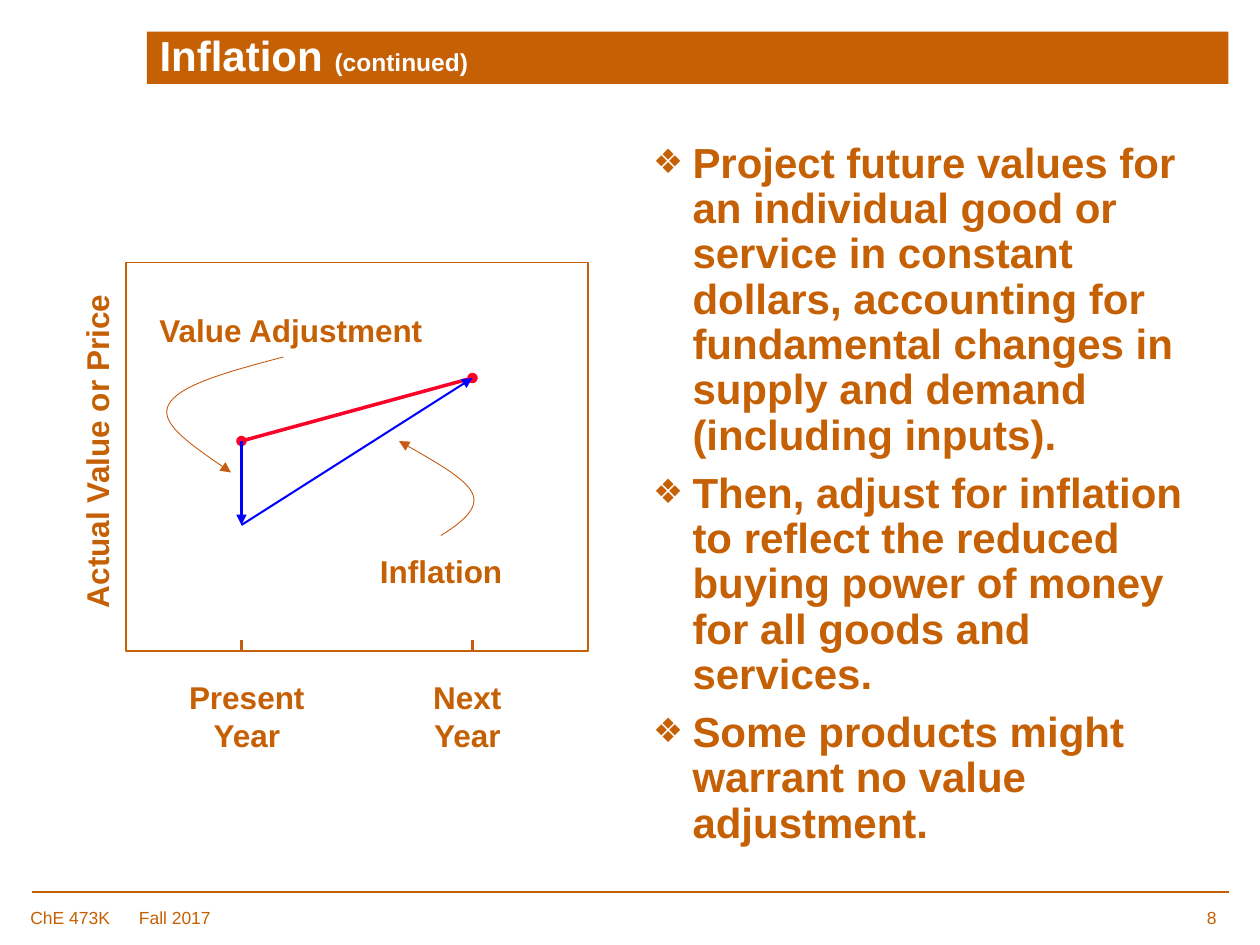
from lxml import etree
from pptx import Presentation
from pptx.dml.color import RGBColor
from pptx.enum.shapes import MSO_CONNECTOR, MSO_SHAPE
from pptx.enum.text import MSO_ANCHOR, MSO_AUTO_SIZE, PP_ALIGN
from pptx.oxml.ns import qn
from pptx.util import Pt

ORANGE = RGBColor(0xC6, 0x60, 0x05)
RUST = RGBColor(0xC7, 0x5B, 0x12)
RED = RGBColor(0xFC, 0x01, 0x28)
BLUE = RGBColor(0x00, 0x00, 0xFF)
WHITE = RGBColor(0xFF, 0xFF, 0xFF)
RECT = MSO_SHAPE.RECTANGLE
STRAIGHT = MSO_CONNECTOR.STRAIGHT
LEFT, CENTER = PP_ALIGN.LEFT, PP_ALIGN.CENTER
TOP, MIDDLE = MSO_ANCHOR.TOP, MSO_ANCHOR.MIDDLE
NO_FIT = MSO_AUTO_SIZE.NONE
THIN = 1.15

# Chart positions in points
NOW, NEXT = 138, 270
BASE = 372
START, LOW, END = 252, 300, 216

POINTS = [
    "Project future values for an individual good or service in constant dollars, "
    "accounting for fundamental changes in supply and demand (including inputs).",
    "Then, adjust for inflation to reflect the reduced buying power of money "
    "for all goods and services.",
    "Some products might warrant no value adjustment.",
]


def place(shape, left, top, width, height):
    shape.left, shape.top = Pt(left), Pt(top)
    shape.width, shape.height = Pt(width), Pt(height)


def set_font(para, size, color=ORANGE, bold=True):
    font = para.font
    font.name, font.bold = "Arial", bold
    font.color.rgb = color
    if size:
        font.size = Pt(size)


def add_xml(parent, tag, **attrs):
    return etree.SubElement(parent, qn(tag), attrs)


def style_line(shape, color, width, head=None, tail=None):
    shape.line.color.rgb = color
    shape.line.width = Pt(width)
    props = shape._element.spPr
    ln = props.find(qn("a:ln"))
    for tag, kind in (("a:headEnd", head), ("a:tailEnd", tail)):
        if kind:
            add_xml(ln, tag, type=kind)
    if props.find(qn("a:effectLst")) is None:
        add_xml(props, "a:effectLst")


def add_line(slide, start, end, color, width, head=None, tail=None):
    line = slide.shapes.add_connector(STRAIGHT, *map(Pt, start + end))
    style_line(line, color, width, head, tail)


def add_curve(slide, start, *parts):
    """Draw joined cubic curves, each part given as two handles and an end."""
    steps = 16
    spots = []
    origin = start
    for one, two, end in parts:
        for i in range(1, steps + 1):
            t = i / steps
            u = 1 - t
            spots.append(tuple(
                Pt(u**3 * a + 3 * u * u * t * b + 3 * u * t * t * c + t**3 * d)
                for a, b, c, d in zip(origin, one, two, end)))
        origin = end
    path = slide.shapes.build_freeform(*map(Pt, start))
    path.add_line_segments(spots, close=False)
    curve = path.convert_to_shape()
    curve.fill.background()
    style_line(curve, RUST, 0.5, tail="triangle")


def add_label(slide, text, box, size=18, bold=True, align=LEFT, wrap=False, turn=0):
    label = slide.shapes.add_textbox(*map(Pt, box))
    label.rotation = turn
    label.text_frame.word_wrap = wrap
    para = label.text_frame.paragraphs[0]
    para.text = text
    para.alignment = align
    if "\t" in text:
        tabs = add_xml(para._p.get_or_add_pPr(), "a:tabLst")
        add_xml(tabs, "a:tab", pos=str(Pt(62)), algn="l")
    set_font(para, size, bold=bold)


def fill_title(shape):
    place(shape, 84, 18, 618, 30)
    shape.fill.solid()
    shape.fill.fore_color.rgb = ORANGE
    frame = shape.text_frame
    frame.auto_size, frame.vertical_anchor = NO_FIT, MIDDLE
    para = frame.paragraphs[0]
    para.alignment, para.line_spacing = LEFT, 0.9
    set_font(para, None, WHITE)
    for text, size in (("Inflation ", 24), ("(continued)", 14)):
        run = para.add_run()
        run.text = text
        run.font.size = Pt(size)


def fill_body(shape):
    place(shape, 366, 77.5, 324, 418)
    frame = shape.text_frame
    frame.auto_size, frame.vertical_anchor = NO_FIT, TOP
    for i, text in enumerate(POINTS):
        para = frame.add_paragraph() if i else frame.paragraphs[0]
        para.text = text
        props = para._p.get_or_add_pPr()
        props.set("marL", str(Pt(22.5)))
        props.set("indent", str(Pt(-22.5)))
        add_xml(props, "a:buSzPct", val="80000")
        add_xml(props, "a:buChar", char="❖")
        para.line_spacing = 0.9
        para.space_before = Pt(7.2 if i else 0)
        set_font(para, 24)


def draw_chart(slide):
    # Frame and ticks
    frame = slide.shapes.add_shape(RECT, *map(Pt, (72, 150, 264, 222)))
    frame.shadow.inherit = False
    frame.fill.solid()
    frame.fill.fore_color.rgb = WHITE
    style_line(frame, ORANGE, 1)
    for x in (NOW, NEXT):
        add_line(slide, (x, BASE), (x, BASE - 6), RUST, THIN)

    # Price path and its two steps
    add_line(slide, (NOW, START), (NEXT, END), RED, 2, "oval", "oval")
    add_line(slide, (NOW, START), (NOW, LOW), BLUE, THIN, tail="triangle")
    add_line(slide, (NOW, LOW), (NEXT, END), BLUE, THIN, tail="triangle")

    # Axis labels
    for text, left in (("Present Year", 96), ("Next Year", 222)):
        add_label(slide, text, (left, 384, 90, 50), align=CENTER, wrap=True)
    add_label(slide, "Actual Value or Price", (-49.5, 243.5, 209.5, 29),
              align=CENTER, wrap=True, turn=270)

    # Callouts
    add_label(slide, "Value Adjustment", (84, 174, 170, 29))
    add_label(slide, "Inflation", (210, 312, 90, 29))
    add_curve(slide, (162, 204),
              ((132, 212), (101, 220), (96, 232)),
              ((91, 243), (112, 256), (132, 270)))
    add_curve(slide, (252, 306),
              ((263, 299), (274, 291), (270, 282)),
              ((266, 273), (247, 263), (228, 252)))


def main():
    deck = Presentation()
    deck.slide_width, deck.slide_height = Pt(720), Pt(540)
    slide = deck.slides.add_slide(deck.slide_layouts[1])
    fill_title(slide.shapes.title)
    fill_body(slide.placeholders[1])
    draw_chart(slide)

    # Footer
    add_line(slide, (702, 510), (18, 510), ORANGE, THIN)
    add_label(slide, "ChE 473K\tFall 2017", (10.3, 515, 118, 19), 10, False)
    add_label(slide, "8", (682.5, 515, 26.5, 19), 10, False)
    deck.save("out.pptx")


if __name__ == "__main__":
    main()
